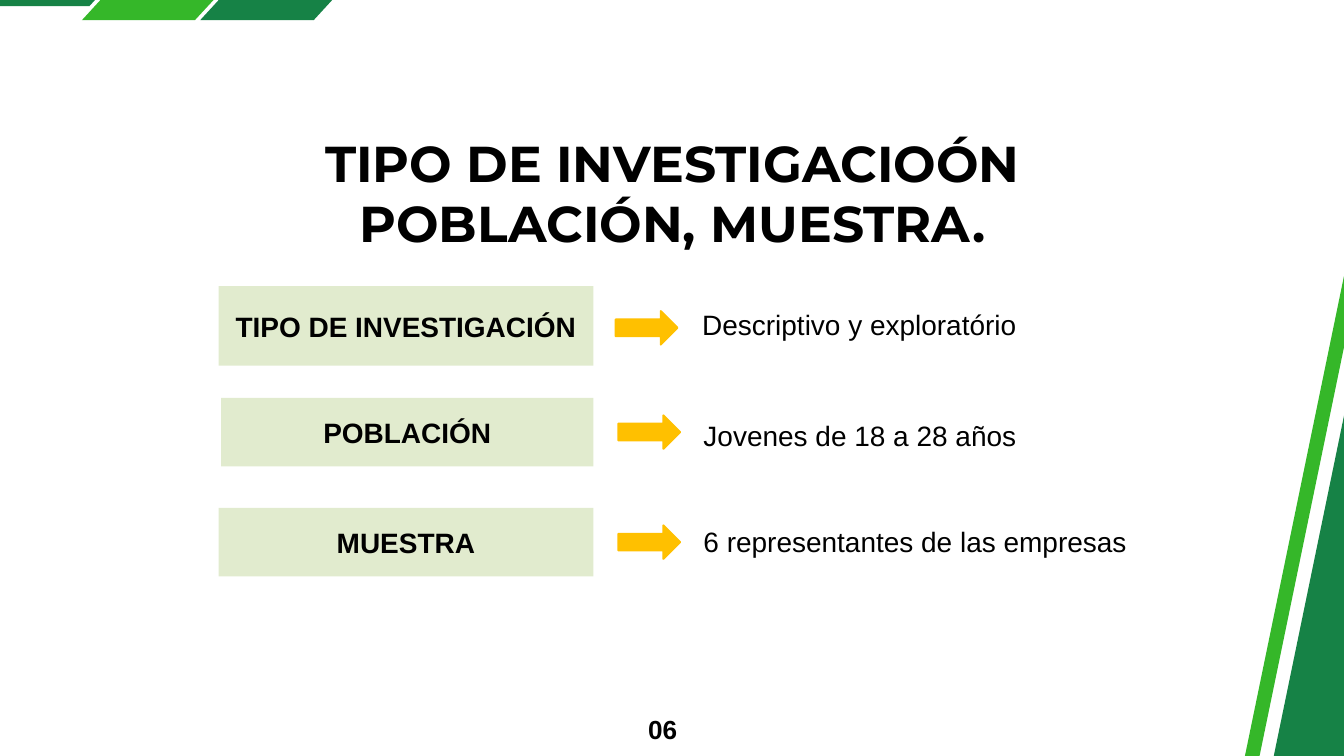
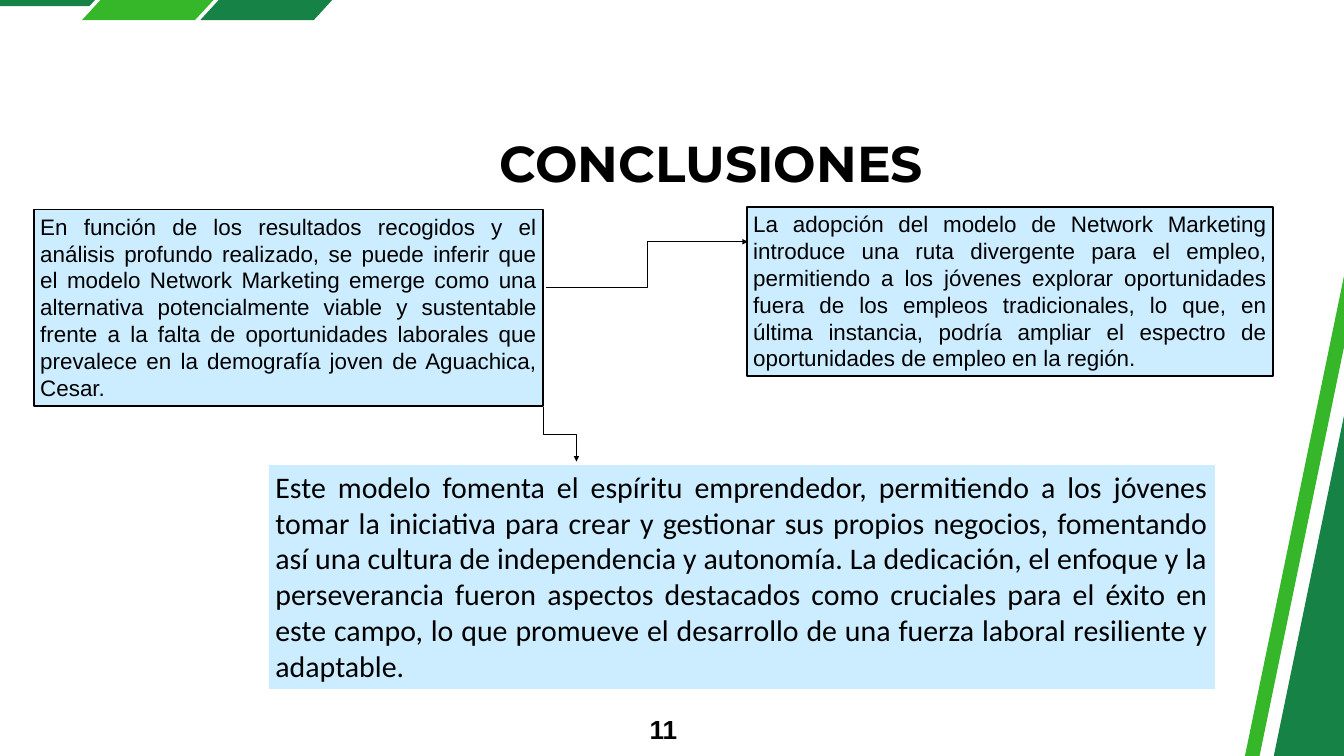
from dataclasses import dataclass

from lxml.etree import SubElement
from pptx import Presentation
from pptx.dml.color import RGBColor
from pptx.enum.shapes import MSO_CONNECTOR, MSO_SHAPE
from pptx.enum.text import MSO_ANCHOR, MSO_AUTO_SIZE, PP_ALIGN
from pptx.oxml.ns import qn
from pptx.util import Cm, Pt


@dataclass(frozen=True)
class Theme:
    black: str = "000000"
    dark_green: str = "168246"
    light_green: str = "35B729"
    label_green: str = "9BBB59"
    arrow: str = "FFC000"
    note: str = "CCECFF"
    title_font: str = "Montserrat"
    body_font: str = "Arial"
    closing_font: str = "Calibri"
    title_size: int = 54
    closing_size: int = 32
    label_size: int = 30
    number_size: int = 28
    note_size: int = 24
    label_opacity: int = 29


THEME = Theme()
TITLE_ONLY = 5

# Lengths are centimetres; boxes are (left, top, width, height).
SLIDE_SIZE = (50.8, 28.58)
NUMBER_BOX = (24.18, 26.77, 1.42, 1.27)
BANDS = [
    (THEME.dark_green, [(-4.55, -2.11), (5.51, -2.11), (3.38, 0.23), (-6.68, 0.23)]),
    (THEME.light_green, [(6.2, -2.62), (10.49, -2.62), (7.37, 0.76), (3.1, 0.76)]),
    (THEME.dark_green, [(10.67, -2.62), (14.96, -2.62), (11.86, 0.76), (7.57, 0.76)]),
    (THEME.dark_green, [(46.05, 38.74), (54.48, -2.11), (66.07, 0.3), (57.63, 41.12)]),
    (THEME.light_green, [(44.96, 38.74), (53.39, -2.11), (53.92, -1.98), (45.49, 38.84)]),
]

METHOD_TITLE = "TIPO DE INVESTIGACIOÓN POBLACIÓN, MUESTRA."
METHOD_TITLE_BOX = (6.15, 4.98, 38.53, 4.62)
ARROW_SIZE = (2.34, 1.27)
ANSWER_SIZE = (16.66, 2.9)
# label, label box, arrow corner, answer, answer corner
METHOD_ROWS = [
    ("TIPO DE INVESTIGACIÓN", (8.26, 10.82, 14.17, 3), (23.27, 11.76),
     "Descriptivo y exploratório", (26.29, 11.51)),
    ("POBLACIÓN", (8.36, 15.04, 14.07, 2.59), (23.37, 15.7),
     "Jovenes de 18 a 28 años", (26.34, 15.7)),
    ("MUESTRA", (8.26, 19.2, 14.17, 2.59), (23.37, 19.86),
     "6 representantes de las empresas", (26.34, 19.69)),
]

CONCLUSIONS_TITLE = "CONCLUSIONES"
CONCLUSIONS_TITLE_BOX = (5.72, 4.98, 42.32, 2.31)
# text, box, font, size, outlined
CONCLUSIONS = [
    ("La adopción del modelo de Network Marketing introduce una ruta divergente para el "
     "empleo, permitiendo a los jóvenes explorar oportunidades fuera de los empleos "
     "tradicionales, lo que, en última instancia, podría ampliar el espectro de "
     "oportunidades de empleo en la región.",
     (28.22, 7.82, 19.89, 6.4), THEME.body_font, THEME.note_size, True),
    ("En función de los resultados recogidos y el análisis profundo realizado, se puede "
     "inferir que el modelo Network Marketing emerge como una alternativa potencialmente "
     "viable y sustentable frente a la falta de oportunidades laborales que prevalece en "
     "la demografía joven de Aguachica, Cesar.",
     (1.27, 7.92, 19.25, 7.44), THEME.body_font, THEME.note_size, True),
    ("Este modelo fomenta el espíritu emprendedor, permitiendo a los jóvenes tomar la "
     "iniciativa para crear y gestionar sus propios negocios, fomentando así una cultura "
     "de independencia y autonomía. La dedicación, el enfoque y la perseverancia fueron "
     "aspectos destacados como cruciales para el éxito en este campo, lo que promueve el "
     "desarrollo de una fuerza laboral resiliente y adaptable.",
     (10.16, 17.58, 35.76, 8.46), THEME.closing_font, THEME.closing_size, False),
]
# begin, end, leaves downwards
CONCLUSION_ARROWS = [
    ((20.65, 10.85), (28.27, 9.14), False),
    ((20.52, 15.37), (21.79, 17.45), True),
]


def lengths(values):
    return [Cm(value) for value in values]


def color(value):
    return RGBColor.from_string(value)


def write(shape, text, size, font=THEME.body_font, bold=False,
          align=PP_ALIGN.JUSTIFY, anchor=MSO_ANCHOR.TOP, inset=True):
    frame = shape.text_frame
    frame.text = text
    frame.word_wrap = True
    frame.auto_size = MSO_AUTO_SIZE.NONE
    frame.vertical_anchor = anchor
    if not inset:
        frame.margin_left = frame.margin_right = 0
        frame.margin_top = frame.margin_bottom = 0
    paragraph = frame.paragraphs[0]
    paragraph.alignment = align
    for run in paragraph.runs:
        run.font.name = font
        run.font.size = Pt(size)
        run.font.bold = bold
        run.font.color.rgb = color(THEME.black)
    return paragraph


def paint(shape, fill, line=None):
    shape.shadow.inherit = False
    shape.fill.solid()
    shape.fill.fore_color.rgb = color(fill)
    if line:
        shape.line.color.rgb = color(line)
        shape.line.width = Pt(2)
    else:
        shape.line.fill.background()


def add_filled_shape(slide, kind, box, fill, line=None):
    shape = slide.shapes.add_shape(kind, *lengths(box))
    paint(shape, fill, line)
    return shape


def set_opacity(shape, percent):
    fill_color = shape.element.spPr.find(qn("a:solidFill")).find(qn("a:srgbClr"))
    SubElement(fill_color, qn("a:alpha")).set("val", str(percent * 1000))


def move_bands_to_layout(slide):
    """Draw the bands once and hand them to the layout that all slides share."""
    layout_tree = slide.slide_layout.shapes.element
    for index, (fill, corners) in enumerate(BANDS):
        points = [lengths(corner) for corner in corners]
        builder = slide.shapes.build_freeform(*points[0], scale=1.0)
        builder.add_line_segments(points[1:], close=True)
        band = builder.convert_to_shape()
        paint(band, fill)
        band.element.nvSpPr.cNvPr.set("id", str(100 + index))
        layout_tree.append(band.element)


def add_slide(presentation, title, title_box, number):
    slide = presentation.slides.add_slide(presentation.slide_layouts[TITLE_ONLY])
    heading = slide.shapes.title
    heading.left, heading.top, heading.width, heading.height = lengths(title_box)
    write(heading, title, THEME.title_size, THEME.title_font, bold=True,
          align=PP_ALIGN.CENTER, inset=False)
    number_box = slide.shapes.add_textbox(*lengths(NUMBER_BOX))
    paragraph = write(number_box, number, THEME.number_size, bold=True,
                      align=PP_ALIGN.RIGHT, inset=False)
    paragraph.line_spacing = Pt(39.2)
    return slide


def add_elbow_arrow(slide, begin, end, downwards):
    (x1, y1), (x2, y2) = begin, end
    if downwards:
        # A quarter turn about the centre makes the first leg vertical.
        middle_x, middle_y = (x1 + x2) / 2, (y1 + y2) / 2
        half_width, half_height = (y2 - y1) / 2, (x2 - x1) / 2
        x1, x2 = middle_x + half_width, middle_x - half_width
        y1, y2 = middle_y - half_height, middle_y + half_height
    connector = slide.shapes.add_connector(
        MSO_CONNECTOR.ELBOW, *lengths((x1, y1, x2, y2)))
    connector.line.color.rgb = color(THEME.black)
    connector.line.width = Pt(0.75)
    properties = connector.element.spPr
    if downwards:
        properties.find(qn("a:xfrm")).set("rot", str(270 * 60000))
    SubElement(properties.find(qn("a:ln")), qn("a:tailEnd")).set("type", "triangle")
    SubElement(properties, qn("a:effectLst"))


def fill_method_slide(slide):
    for label, label_box, arrow_corner, answer, answer_corner in METHOD_ROWS:
        label_shape = add_filled_shape(
            slide, MSO_SHAPE.RECTANGLE, label_box, THEME.label_green)
        set_opacity(label_shape, THEME.label_opacity)
        write(label_shape, label, THEME.label_size, bold=True,
              align=PP_ALIGN.CENTER, anchor=MSO_ANCHOR.MIDDLE)
        add_filled_shape(slide, MSO_SHAPE.RIGHT_ARROW, arrow_corner + ARROW_SIZE,
                         THEME.arrow, THEME.arrow)
        answer_box = slide.shapes.add_textbox(*lengths(answer_corner + ANSWER_SIZE))
        write(answer_box, answer, THEME.label_size)


def fill_conclusions_slide(slide):
    for text, box, font, size, outlined in CONCLUSIONS:
        note = add_filled_shape(slide, MSO_SHAPE.RECTANGLE, box, THEME.note,
                                THEME.black if outlined else None)
        write(note, text, size, font)
    for begin, end, downwards in CONCLUSION_ARROWS:
        add_elbow_arrow(slide, begin, end, downwards)


def main():
    presentation = Presentation()
    presentation.slide_width, presentation.slide_height = lengths(SLIDE_SIZE)
    method = add_slide(presentation, METHOD_TITLE, METHOD_TITLE_BOX, "06")
    move_bands_to_layout(method)
    fill_method_slide(method)
    conclusions = add_slide(
        presentation, CONCLUSIONS_TITLE, CONCLUSIONS_TITLE_BOX, "11")
    fill_conclusions_slide(conclusions)
    presentation.save("out.pptx")


if __name__ == "__main__":
    main()
